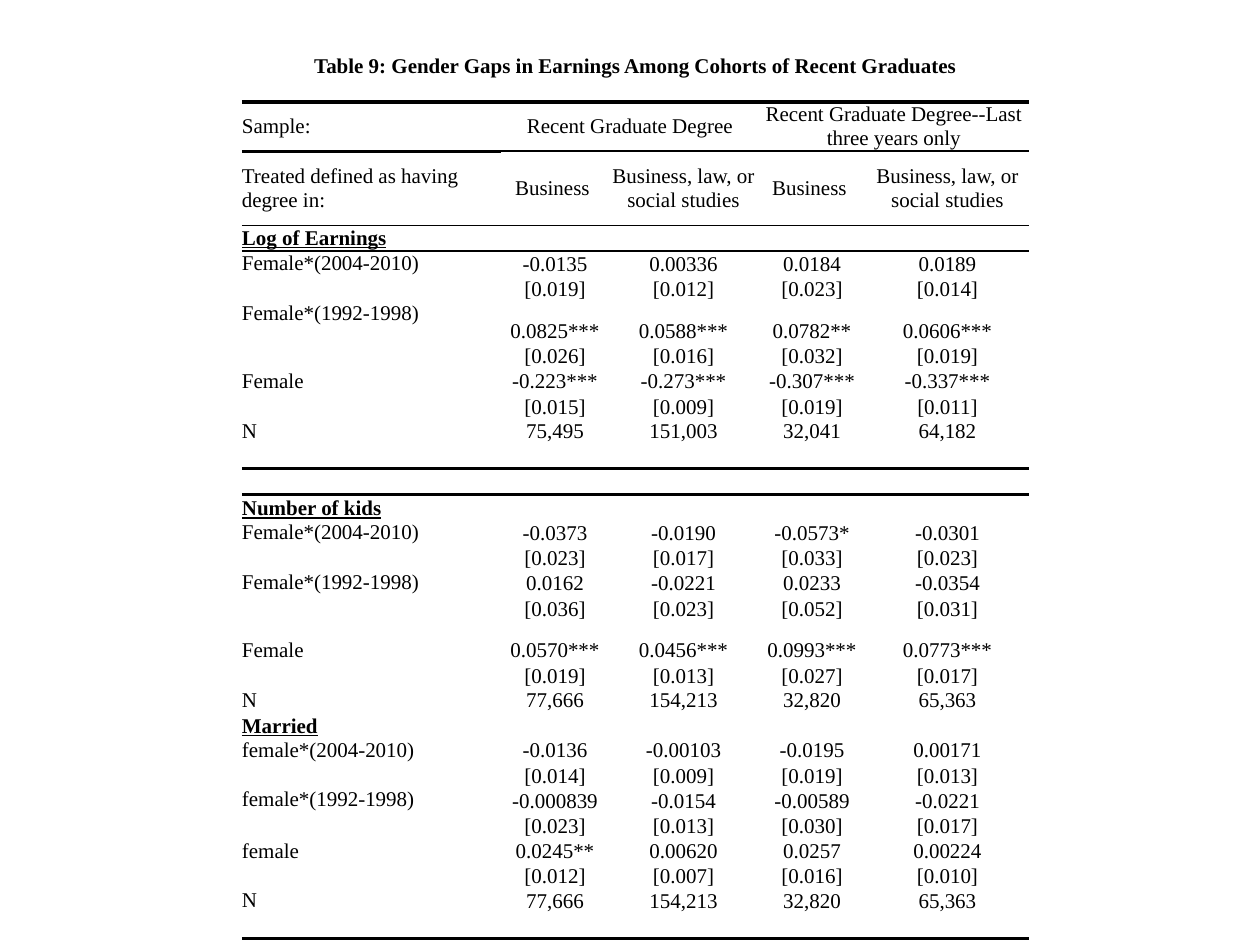
import pptx
import pptx.util
from pptx.dml.color import RGBColor
from pptx.enum.text import MSO_ANCHOR, PP_ALIGN
from pptx.oxml.ns import qn
from lxml import etree

BLACK = RGBColor(0x00, 0x00, 0x00)
WHITE = RGBColor(0xFF, 0xFF, 0xFF)
SLIDE_WIDTH = pptx.util.Inches(10)
SLIDE_HEIGHT = pptx.util.Inches(7.5)
GRID_COLUMN = SLIDE_WIDTH / 100
GRID_ROW = pptx.util.Pt(14.04)
NO_STYLE = "{2D5ABB26-0587-4C30-8999-92F81FD0307C}"

COLUMN_UNITS = [20.6, 8.5, 11.9, 8.5, 13]
ROW_UNITS = {0: 2.87, 1: 2, 2: 3.03, 6: 1.69, 18: 1.69}
RULES_BELOW = {0: 2, 1: 1, 2: 1, 11: 2, 29: 2}
SPANS = [((0, 0), (0, 4)), ((1, 1), (1, 2)), ((1, 3), (1, 4))]
BLANK_FILLED_ROW = 11

TITLE = "Table 9: Gender Gaps in Earnings Among Cohorts of Recent Graduates"
PANEL_NAMES = ["Log of Earnings", "Number of kids", "Married"]
FIELDS = ["Business ", "Business, law, or social studies"]
RESULTS = [
    (TITLE,),
    ("Sample:", "Recent Graduate Degree", "",
     "Recent Graduate Degree--Last three years only"),
    ("Treated defined as having degree in:", *FIELDS, *FIELDS),
    (PANEL_NAMES[0],),
    ("Female*(2004-2010)", "-0.0135", "0.00336", "0.0184", "0.0189"),
    ("", "[0.019]", "[0.012]", "[0.023]", "[0.014]"),
    ("Female*(1992-1998)", "0.0825***", "0.0588***", "0.0782**", "0.0606***"),
    ("", "[0.026]", "[0.016]", "[0.032]", "[0.019]"),
    ("Female", "-0.223***", "-0.273***", "-0.307***", "-0.337***"),
    ("", "[0.015]", "[0.009]", "[0.019]", "[0.011]"),
    ("N", "75,495", "151,003", "32,041", "64,182"),
    (),
    (),
    (PANEL_NAMES[1],),
    ("Female*(2004-2010)", "-0.0373", "-0.0190", "-0.0573*", "-0.0301"),
    ("", "[0.023]", "[0.017]", "[0.033]", "[0.023]"),
    ("Female*(1992-1998)", "0.0162", "-0.0221", "0.0233", "-0.0354"),
    ("", "[0.036]", "[0.023]", "[0.052]", "[0.031]"),
    ("Female", "0.0570***", "0.0456***", "0.0993***", "0.0773***"),
    ("", "[0.019]", "[0.013]", "[0.027]", "[0.017]"),
    ("N", "77,666", "154,213", "32,820", "65,363"),
    (PANEL_NAMES[2],),
    ("female*(2004-2010)", "-0.0136", "-0.00103", "-0.0195", "0.00171"),
    ("", "[0.014]", "[0.009]", "[0.019]", "[0.013]"),
    ("female*(1992-1998)", "-0.000839", "-0.0154", "-0.00589", "-0.0221"),
    ("", "[0.023]", "[0.013]", "[0.030]", "[0.017]"),
    ("female", "0.0245**", "0.00620", "0.0257", "0.00224"),
    ("", "[0.012]", "[0.007]", "[0.016]", "[0.010]"),
    ("N", "77,666", "154,213", "32,820", "65,363"),
    (),
]


def set_all(target, values):
    for attribute, value in values.items():
        setattr(target, attribute, value)


def add_results_table(slide):
    frame = slide.shapes.add_table(
        len(RESULTS), len(COLUMN_UNITS),
        pptx.util.Inches(1.92), pptx.util.Inches(0.25),
        int(sum(COLUMN_UNITS) * GRID_COLUMN), int(len(RESULTS) * GRID_ROW))
    results = frame.table
    set_all(results, {"first_row": False, "horz_banding": False})
    results._tbl.tblPr.find(qn("a:tableStyleId")).text = NO_STYLE
    for column, units in zip(results.columns, COLUMN_UNITS):
        column.width = int(units * GRID_COLUMN)
    for index, row in enumerate(results.rows):
        row.height = int(ROW_UNITS.get(index, 1) * GRID_ROW)
    for first, last in SPANS:
        results.cell(*first).merge(results.cell(*last))
    return results


def draw_rule(cell, edge, points):
    rule = etree.SubElement(cell._tc.get_or_add_tcPr(), qn(edge),
                            w=str(pptx.util.Pt(points)))
    fill = etree.SubElement(rule, qn("a:solidFill"))
    etree.SubElement(fill, qn("a:srgbClr"), val=str(BLACK))


def rule_below(row, column):
    if (row, column) == (1, 0):
        return None
    return RULES_BELOW.get(row)


def anchor_for(text, row, column):
    if row <= 3:
        return MSO_ANCHOR.MIDDLE
    if column == 0 and "1992" in text:
        return MSO_ANCHOR.TOP
    if column == 0 and (text == "N" or "2004" in text):
        return MSO_ANCHOR.MIDDLE
    return MSO_ANCHOR.BOTTOM


def write_text(cell, text, row, column):
    paragraph = cell.text_frame.paragraphs[0]
    centred = row == 0 or column > 0
    paragraph.alignment = PP_ALIGN.CENTER if centred else PP_ALIGN.LEFT
    if not text:
        paragraph._p.get_or_add_endParaRPr().set("sz", "1200")
        return
    run = paragraph.add_run()
    run.text = text
    is_panel = text in PANEL_NAMES
    set_all(run.font, {
        "name": "Times New Roman",
        "size": pptx.util.Pt(12),
        "bold": is_panel or row == 0,
        "underline": is_panel,
    })
    run.font.color.rgb = BLACK


def format_cell(cell, text, row, column):
    set_all(cell, {
        "margin_left": 0,
        "margin_right": 0,
        "margin_top": 0,
        "margin_bottom": 0,
        "vertical_anchor": anchor_for(text, row, column),
    })
    for edge, points in (("a:lnT", rule_below(row - 1, column)),
                         ("a:lnB", rule_below(row, column))):
        if points:
            draw_rule(cell, edge, points)
    if row == BLANK_FILLED_ROW:
        cell.fill.solid()
        cell.fill.fore_color.rgb = WHITE
    else:
        cell.fill.background()
    write_text(cell, text, row, column)


def main():
    deck = pptx.Presentation()
    set_all(deck, {"slide_width": SLIDE_WIDTH, "slide_height": SLIDE_HEIGHT})
    slide = deck.slides.add_slide(deck.slide_layouts[6])
    results = add_results_table(slide)
    for row, entries in enumerate(RESULTS):
        for column in range(len(COLUMN_UNITS)):
            text = entries[column] if column < len(entries) else ""
            format_cell(results.cell(row, column), text, row, column)
    deck.save("out.pptx")


if __name__ == "__main__":
    main()
